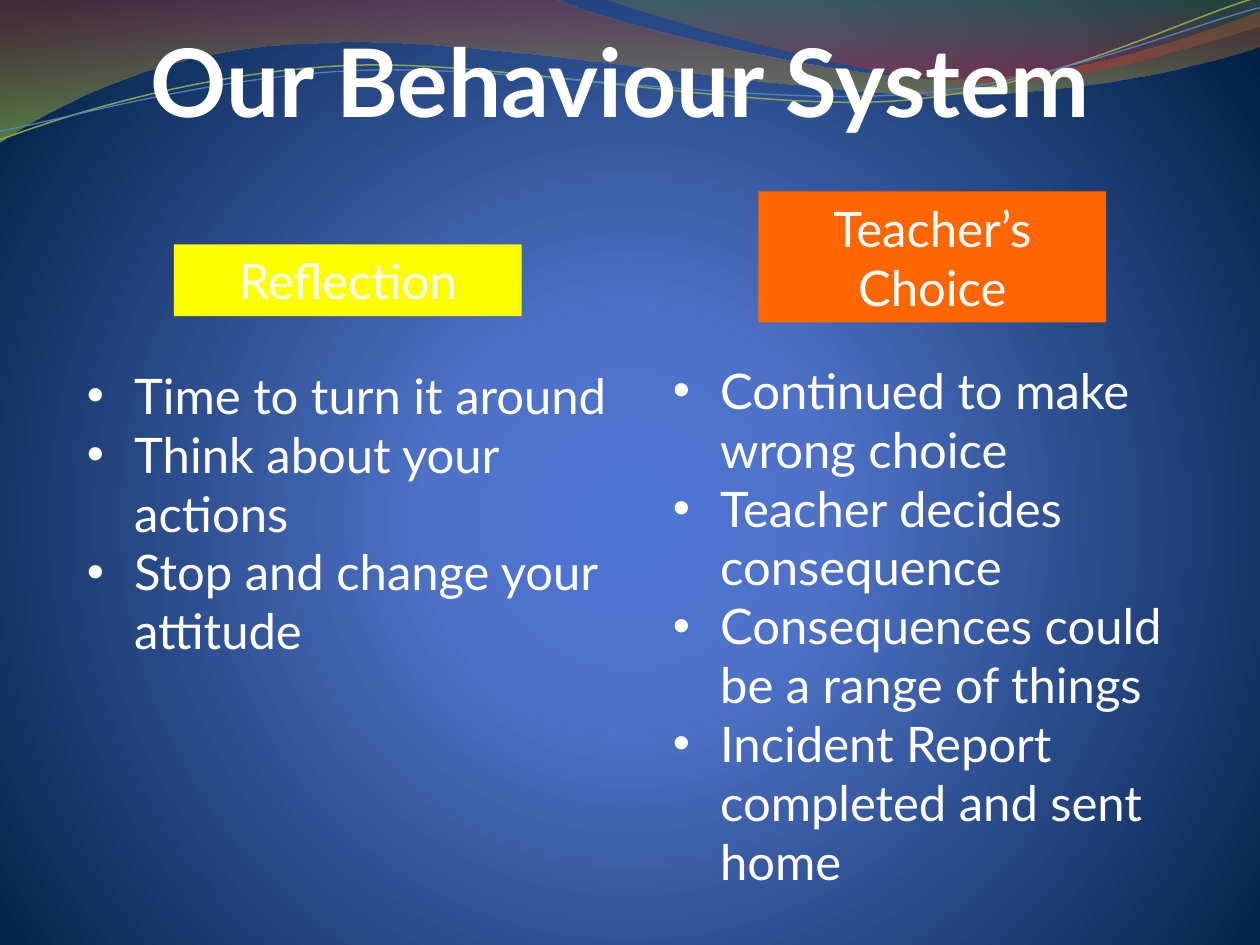
from lxml import etree
from pptx import Presentation
from pptx.dml.color import RGBColor
from pptx.enum.shapes import MSO_SHAPE
from pptx.enum.text import MSO_ANCHOR, MSO_AUTO_SIZE, PP_ALIGN
from pptx.oxml.ns import nsdecls, qn
from pptx.util import Inches, Pt

FONT = "Lato"
WHITE = RGBColor(0xFF, 0xFF, 0xFF)
YELLOW = RGBColor(0xFF, 0xFF, 0x00)
ORANGE = RGBColor(0xFF, 0x66, 0x00)
GREEN = RGBColor(0x89, 0xA5, 0x4F)
BLUE = RGBColor(0x4F, 0x81, 0xBD)

TITLE = "Our Behaviour System"
COLUMNS = [
    {"label": "Reflection", "fill": YELLOW, "label_box": (1.38, 1.94, 2.76, 0.57),
     "list_box": (0.59, 2.85, 4.33, 3.4),
     "items": ["Time to turn it around", "Think about your actions",
               "Stop and change your attitude"]},
    {"label": "Teacher’s Choice", "fill": ORANGE, "label_box": (6.02, 1.52, 2.76, 1.04),
     "list_box": (5.24, 2.81, 4.33, 4.81),
     "items": ["Continued to make wrong choice", "Teacher decides consequence",
               "Consequences could be a range of things",
               "Incident Report completed and sent home"]},
]

BACKGROUND = [(0, "4D75D6", 100), (25, "4E72C7", 100), (100, "001F44", 100)]
CIRCLE = '<a:path path="circle"><a:fillToRect l="10000" t="110000" r="10000" b="100000"/></a:path>'
DOWNWARD = '<a:lin ang="5400000" scaled="0"/>'

BANDS = [
    ([(0, 0), (4.4, -0.01), (4.76, 0.17, 6.64, 0.63, 7.58, 0.63),
      (8.53, 0.63, 9.58, 0.26, 10, 0.09), (10.01, 0.36),
      (9.83, 0.44, 8.7, 0.76, 7.46, 0.75), (6.22, 0.75, 3.82, 0.28, 2.57, 0.34),
      (1.29, 0.36, 0.46, 0.83, -0.01, 1.13), (0, 0)],
     [(0, "973330", 45), (100, "95C238", 55)]),
    ([(4.79, -0.01), (5.09, 0.11, 6.82, 0.62, 7.69, 0.65),
      (8.56, 0.69, 9.61, 0.32, 10, 0.21), (10, 0), (4.79, -0.01)],
     [(0, "769537", 30), (80, "BE3330", 45)]),
]
STRANDS = [
    ([(0, 1.11), (0.48, 0.93, 1.58, 0.57, 2.77, 0.52),
      (3.95, 0.47, 5.93, 0.89, 7.13, 0.8), (8.33, 0.71, 9.38, 0.15, 9.98, -0.02)],
     GREEN, 0.85),
    ([(0, 1.04), (0.47, 0.96, 1.64, 0.61, 2.83, 0.56),
      (4.03, 0.51, 5.97, 0.84, 7.17, 0.75), (8.36, 0.67, 9.41, 0.21, 10, 0.06)],
     BLUE, 0.75),
]


def set_gradient(fill, parent, stops, direction):
    fill.background()
    gs = "".join(
        f'<a:gs pos="{pos * 1000}"><a:srgbClr val="{color}">'
        f'<a:alpha val="{alpha * 1000}"/></a:srgbClr></a:gs>'
        for pos, color, alpha in stops)
    grad = etree.fromstring(
        f'<a:gradFill {nsdecls("a")} rotWithShape="1"><a:gsLst>{gs}</a:gsLst>{direction}</a:gradFill>')
    parent.replace(parent.find(qn("a:noFill")), grad)


def add_wave(shapes, segments, close):
    ends = [(Inches(seg[-2]), Inches(seg[-1])) for seg in segments]
    builder = shapes.build_freeform(*ends[0], scale=1.0)
    builder.add_line_segments(ends[1:], close=close)
    sp = builder.convert_to_shape()
    sp.shadow.inherit = False
    lines = list(sp._element.spPr.iter(qn("a:lnTo")))
    for line, seg in zip(lines, segments[1:]):
        if len(seg) == 2:
            continue
        curve = etree.Element(qn("a:cubicBezTo"))
        for x, y in zip(seg[::2], seg[1::2]):
            pt = etree.SubElement(curve, qn("a:pt"))
            pt.set("x", str(Inches(x) - sp.left))
            pt.set("y", str(Inches(y) - sp.top))
        line.getparent().replace(line, curve)
    return sp


def place(sp, box):
    sp.left, sp.top, sp.width, sp.height = map(Inches, box)


def write(sp, *lines, size=28, bold=False, align=PP_ALIGN.CENTER,
          anchor=MSO_ANCHOR.MIDDLE, bullet=None):
    tf = sp.text_frame
    tf.word_wrap = True
    tf.auto_size = MSO_AUTO_SIZE.NONE
    tf.vertical_anchor = anchor
    for i, line in enumerate(lines):
        p = tf.paragraphs[0] if i == 0 else tf.add_paragraph()
        p.alignment = align
        p.space_before = Pt(0)
        if bullet:
            pPr = p._p.get_or_add_pPr()
            pPr.set("marL", str(Pt(27)))
            pPr.set("indent", str(-Pt(27)))
            etree.SubElement(pPr, qn("a:buFont")).set("typeface", "Arial")
            etree.SubElement(pPr, qn("a:buChar")).set("char", bullet)
        r = p.add_run()
        r.text = line
        r.font.name = FONT
        r.font.size = Pt(size)
        r.font.bold = bold
        r.font.color.rgb = WHITE


def main():
    prs = Presentation()
    prs.slide_width, prs.slide_height = Inches(10), Inches(7.5)
    slide = prs.slides.add_slide(prs.slide_layouts[3])
    shapes = slide.shapes
    title, *bodies = slide.placeholders

    bg = slide.background.fill
    bg.background()
    set_gradient(bg, slide._element.cSld.bg.bgPr, BACKGROUND, CIRCLE)

    for segments, stops in BANDS:
        sp = add_wave(shapes, segments, close=True)
        set_gradient(sp.fill, sp._element.spPr, stops, DOWNWARD)
        sp.line.fill.background()
    for segments, color, width in STRANDS:
        sp = add_wave(shapes, segments, close=False)
        sp.fill.background()
        sp.line.color.rgb = color
        sp.line.width = Pt(width)

    shapes._spTree.append(title._element)
    place(title, (0.91, 0.13, 8.03, 1.01))
    write(title, TITLE, size=54, bold=True)

    for column in COLUMNS:
        sp = shapes.add_shape(MSO_SHAPE.RECTANGLE, *map(Inches, column["label_box"]))
        sp.shadow.inherit = False
        sp.fill.solid()
        sp.fill.fore_color.rgb = column["fill"]
        sp.line.fill.background()
        write(sp, column["label"])

    for column, body in zip(COLUMNS, bodies):
        shapes._spTree.append(body._element)
        place(body, column["list_box"])
        write(body, *column["items"], align=PP_ALIGN.LEFT, anchor=MSO_ANCHOR.TOP, bullet="•")

    prs.save("out.pptx")


if __name__ == "__main__":
    main()
